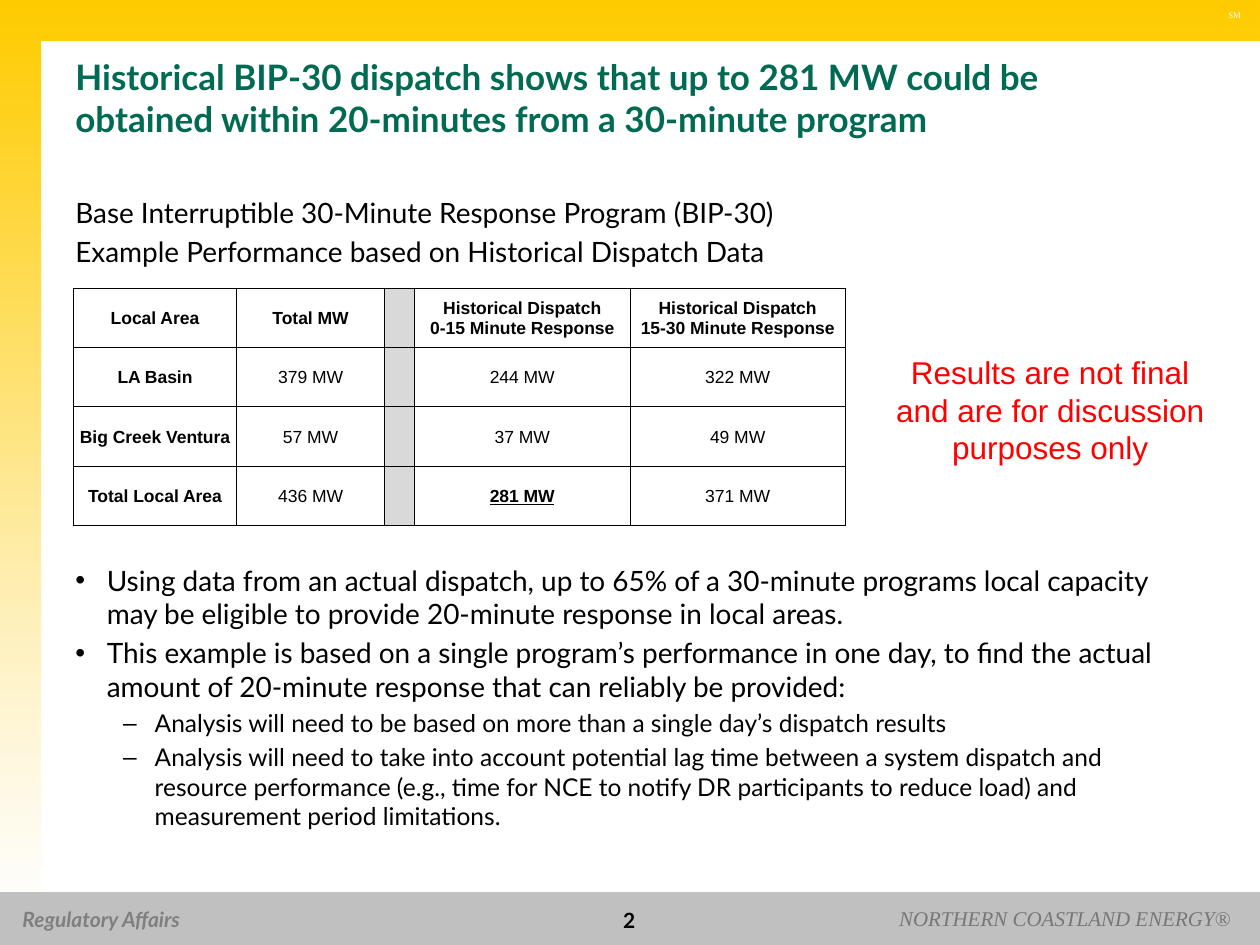
"""Build the BIP-30 historical dispatch slide with its results table."""
from lxml import etree
from pptx import Presentation
from pptx.dml.color import RGBColor
from pptx.enum.shapes import MSO_SHAPE
from pptx.enum.text import MSO_ANCHOR, PP_ALIGN
from pptx.oxml.ns import qn
from pptx.util import Inches, Pt

LEFT, CENTER, RIGHT = PP_ALIGN.LEFT, PP_ALIGN.CENTER, PP_ALIGN.RIGHT
TOP, MIDDLE = MSO_ANCHOR.TOP, MSO_ANCHOR.MIDDLE
RECTANGLE = MSO_SHAPE.RECTANGLE
WIDTH, HEIGHT = Inches(10), Inches(7.5)

THEME = {
    "band": "FFCC00", "band_end": "FFFFFF", "band_alpha": 40,
    "footer": "C0C0C0", "spacer": "D9D9D9", "border": "000000",
    "title": {"name": "Lato", "size": 20, "color": "006A53", "bold": True},
    "body": {"name": "Lato", "size": 16, "color": "000000"},
    "detail": {"name": "Lato", "size": 14, "color": "000000"},
    "notice": {"name": "Arial", "size": 18, "color": "FF0000"},
    "cell": {"name": "Arial", "size": 10, "color": "000000"},
    "strong": {"name": "Arial", "size": 10, "color": "000000", "bold": True},
    "peak": {"name": "Arial", "size": 10, "color": "000000", "bold": True, "underline": True},
    "department": {"name": "Lato", "size": 12, "color": "7F7F7F", "bold": True, "italic": True},
    "number": {"name": "Lato", "size": 12, "color": "000000", "bold": True},
    "mark": {"name": "Times New Roman", "size": 5, "color": "FFFFFF"},
    "company": {"name": "Times New Roman", "size": 12, "color": "777777", "italic": True},
}

BAND = [(0, 96.67), (0, 0), (100, 0), (100, 4.4), (3.3, 4.4), (3.3, 96.67)]
BAND_LAYERS = 2
FOOTER_BOX = (0, 94.4, 100, 5.6)
BULLETS = {"body": ("•", 0.25), "detail": ("–", 0.63)}
HANGING = 0.25

TEXTS = [
    {"box": (0.8, 95.33, 17.4, 4), "wrap": False,
     "lines": [("department", "Regulatory Affairs")]},
    {"box": (96.5, 0.4, 3, 2.4), "wrap": False, "lines": [("mark", "SM")]},
    {"box": (65, 95.2, 33.7, 4), "align": RIGHT,
     "lines": [("company", "NORTHERN COASTLAND ENERGY®")]},
    {"box": (5, 5.07, 90, 10.53), "anchor": MIDDLE, "lines": [
        ("title", "Historical BIP-30 dispatch shows that up to 281 MW could be "
                  "obtained within 20-minutes from a 30-minute program")]},
    {"box": (38.3, 95.2, 23.3, 4.4), "anchor": MIDDLE, "align": CENTER,
     "lines": [("number", "2")]},
    {"box": (5, 20, 90, 10), "lines": [
        ("body", "Base Interruptible 30-Minute Response Program (BIP-30)"),
        ("body", "Example Performance based on Historical Dispatch Data")]},
    {"box": (5, 58.93, 90, 33.33), "bullets": True, "lines": [
        ("body", "Using data from an actual dispatch, up to 65% of a 30-minute programs "
                 "local capacity may be eligible to provide 20-minute response in local areas."),
        ("body", "This example is based on a single program’s performance in one day, to find "
                 "the actual amount of 20-minute response that can reliably be provided:"),
        ("detail", "Analysis will need to be based on more than a single day’s dispatch results"),
        ("detail", "Analysis will need to take into account potential lag time between a system "
                   "dispatch and resource performance (e.g., time for NCE to notify DR participants "
                   "to reduce load) and measurement period limitations.")]},
    {"box": (70, 36.67, 26.7, 13.47), "align": CENTER, "lines": [
        ("notice", "Results are not final and are for discussion purposes only")]},
]

TABLE_BOX = (5.8, 30.53, 61.3, 25.07)
COLUMN_SHARES = [13, 11.7, 2.4, 17.1, 17.1]
SPACER_COLUMN = 2
PEAK_CELL = (3, 3)
ROWS = [
    ["Local Area", "Total MW", "", "Historical Dispatch\n0-15 Minute Response",
     "Historical Dispatch\n15-30 Minute Response"],
    ["LA Basin", "379 MW", "", "244 MW", "322 MW"],
    ["Big Creek Ventura", "57 MW", "", "37 MW", "49 MW"],
    ["Total Local Area", "436 MW", "", "281 MW", "371 MW"],
]
CELL_FORMAT = {"margin_left": Inches(0.01), "margin_right": Inches(0.01),
               "margin_top": Inches(0.01), "margin_bottom": 0, "vertical_anchor": MIDDLE}


def across(share):
    return int(WIDTH * share / 100)


def down(share):
    return int(HEIGHT * share / 100)


def place(box):
    left, top, width, height = box
    return across(left), down(top), across(width), down(height)


def color(name):
    return RGBColor.from_string(name)


def write(paragraph, text, style):
    paragraph.text = text
    for run in paragraph.runs:
        for name, value in THEME[style].items():
            if name == "color":
                run.font.color.rgb = color(value)
            else:
                setattr(run.font, name, Pt(value) if name == "size" else value)


def add_band(slide):
    points = [(across(x), down(y)) for x, y in BAND]
    builder = slide.shapes.build_freeform(*points[0])
    builder.add_line_segments(points[1:], close=True)
    shape = builder.convert_to_shape()
    shape.shadow.inherit = False
    shape.line.fill.background()
    shape.fill.gradient()
    shape.fill.gradient_angle = 270
    start, end = shape.fill.gradient_stops
    start.color.rgb = color(THEME["band"])
    end.color.rgb = color(THEME["band_end"])
    tint = shape.element.spPr.findall(".//" + qn("a:srgbClr"))[-1]
    etree.SubElement(tint, qn("a:alpha"), val=str(THEME["band_alpha"] * 1000))


def add_footer(slide):
    shape = slide.shapes.add_shape(RECTANGLE, *place(FOOTER_BOX))
    shape.shadow.inherit = False
    shape.fill.solid()
    shape.fill.fore_color.rgb = color(THEME["footer"])
    shape.line.fill.background()


def add_bullet(paragraph, style):
    symbol, indent = BULLETS[style]
    properties = paragraph._p.get_or_add_pPr()
    properties.set("marL", str(Inches(indent)))
    properties.set("indent", str(-Inches(HANGING)))
    etree.SubElement(properties, qn("a:buFont"), typeface="Arial")
    etree.SubElement(properties, qn("a:buChar"), char=symbol)


def add_text(slide, item):
    frame = slide.shapes.add_textbox(*place(item["box"])).text_frame
    frame.word_wrap = item.get("wrap", True)
    frame.vertical_anchor = item.get("anchor", TOP)
    for index, (style, text) in enumerate(item["lines"]):
        paragraph = frame.add_paragraph() if index else frame.paragraphs[0]
        if item.get("bullets"):
            add_bullet(paragraph, style)
        paragraph.alignment = item.get("align", LEFT)
        if index:
            paragraph.space_before = Pt(THEME[style]["size"] * 0.2)
        write(paragraph, text, style)


def add_borders(cell):
    properties = cell._tc.get_or_add_tcPr()
    for side in ("lnL", "lnR", "lnT", "lnB"):
        line = etree.SubElement(properties, qn("a:" + side), w=str(Pt(0.5)))
        fill = etree.SubElement(line, qn("a:solidFill"))
        etree.SubElement(fill, qn("a:srgbClr"), val=THEME["border"])


def cell_style(row, column):
    if (row, column) == PEAK_CELL:
        return "peak"
    return "cell" if row and column else "strong"


def add_results(slide):
    table = slide.shapes.add_table(len(ROWS), len(COLUMN_SHARES), *place(TABLE_BOX)).table
    table.first_row = table.horz_banding = False
    for column, share in zip(table.columns, COLUMN_SHARES):
        column.width = across(share)
    for row, texts in enumerate(ROWS):
        for column, text in enumerate(texts):
            cell = table.cell(row, column)
            add_borders(cell)
            for name, value in CELL_FORMAT.items():
                setattr(cell, name, value)
            if column == SPACER_COLUMN:
                cell.fill.solid()
                cell.fill.fore_color.rgb = color(THEME["spacer"])
                continue
            cell.fill.background()
            paragraph = cell.text_frame.paragraphs[0]
            paragraph.alignment = CENTER
            write(paragraph, text, cell_style(row, column))


def main():
    presentation = Presentation()
    presentation.slide_width, presentation.slide_height = WIDTH, HEIGHT
    slide = presentation.slides.add_slide(presentation.slide_layouts[6])
    for _ in range(BAND_LAYERS):
        add_band(slide)
    add_footer(slide)
    for item in TEXTS:
        add_text(slide, item)
    add_results(slide)
    presentation.save("out.pptx")


if __name__ == "__main__":
    main()
